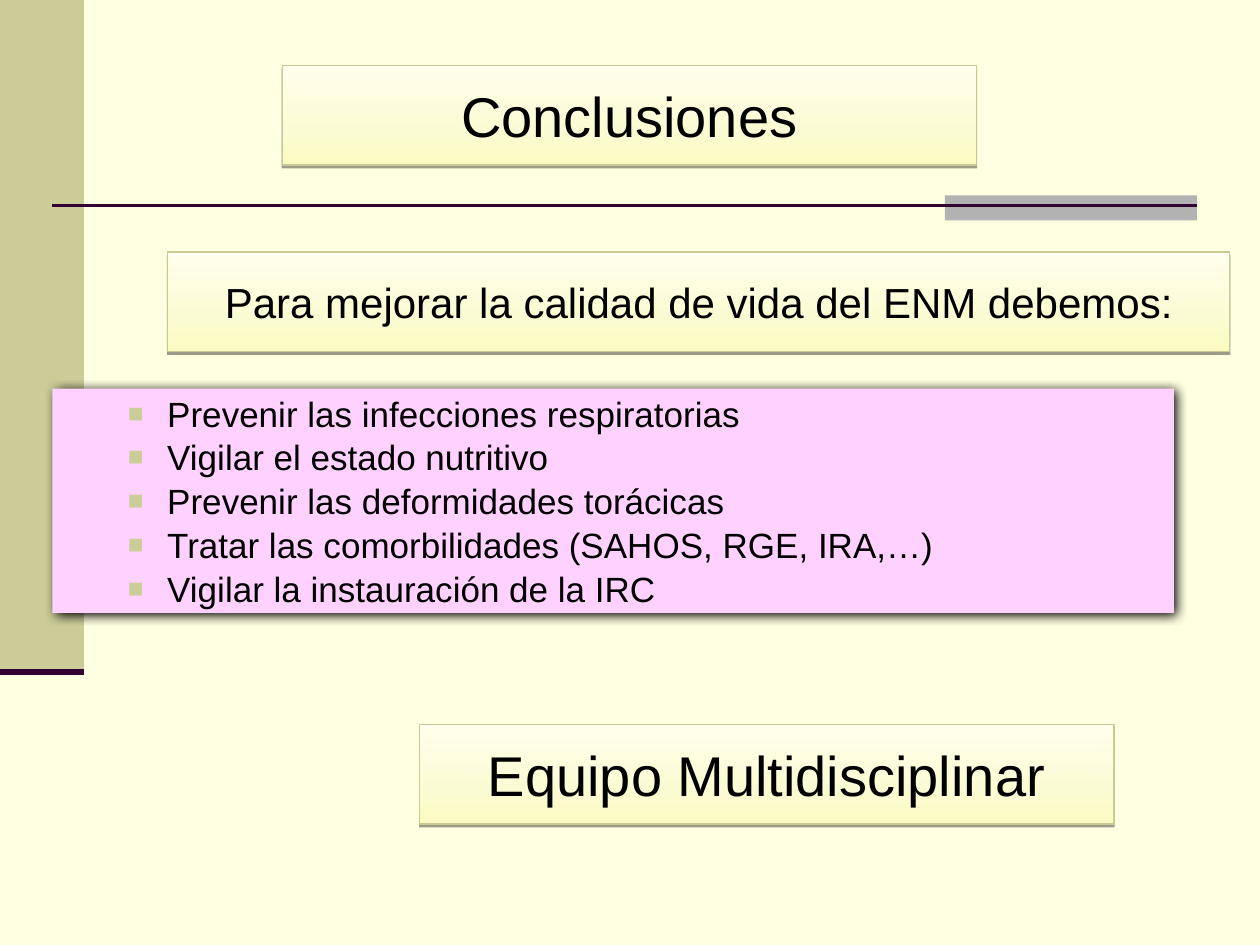
from lxml import etree
from pptx import Presentation
from pptx.dml.color import RGBColor
from pptx.enum.shapes import MSO_CONNECTOR, MSO_SHAPE
from pptx.enum.text import MSO_ANCHOR, PP_ALIGN
from pptx.oxml import parse_xml
from pptx.oxml.ns import nsdecls, qn
from pptx.util import Pt

RECTANGLE, STRAIGHT = MSO_SHAPE.RECTANGLE, MSO_CONNECTOR.STRAIGHT
MIDDLE, CENTER, LEFT = MSO_ANCHOR.MIDDLE, PP_ALIGN.CENTER, PP_ALIGN.LEFT

CREAM = RGBColor(0xFF, 0xFF, 0xE1)
OLIVE = RGBColor(0xCC, 0xCC, 0x99)
GRAY = RGBColor(0xB2, 0xB2, 0xB2)
PLUM = RGBColor(0x33, 0x00, 0x33)
PINK = RGBColor(0xFF, 0xD1, 0xFF)
BORDER = RGBColor(0xC9, 0xC9, 0x94)
BLACK = RGBColor(0, 0, 0)
BANNER_STOPS = [(0, RGBColor(0xFF, 0xFF, 0xED)),
                (65, RGBColor(0xFB, 0xFB, 0xD3)),
                (100, RGBColor(0xFB, 0xFB, 0xC1))]
FONT = "Arial"

# Content: left, top, width and font size go with each banner text
BANNER_HEIGHT = 56.9
BANNERS = [
    ("Conclusiones", 161.3, 37.4, 396.7, 32),
    ("Para mejorar la calidad de vida del ENM debemos:", 95.8, 144, 607, 24),
    ("Equipo Multidisciplinar", 239.8, 414, 396.7, 32),
]
MEASURES = [
    "Prevenir las infecciones respiratorias",
    "Vigilar el estado nutritivo",
    "Prevenir las deformidades torácicas",
    "Tratar las comorbilidades (SAHOS, RGE, IRA,…)",
    "Vigilar la instauración de la IRC",
]


def add_box(left, top, width, height, color=None):
    shape = slide.shapes.add_shape(
        RECTANGLE, Pt(left), Pt(top), Pt(width), Pt(height))
    shape.shadow.inherit = False
    shape.line.fill.background()
    if color is not None:
        shape.fill.solid()
        shape.fill.fore_color.rgb = color
    return shape


def add_rule(left, right, y, weight):
    rule = slide.shapes.add_connector(STRAIGHT, Pt(left), Pt(y), Pt(right), Pt(y))
    rule.line.color.rgb = PLUM
    rule.line.width = Pt(weight)
    etree.SubElement(rule._element.spPr, qn("a:effectLst"))


def add_shadow(shape, alpha, blur, distance, angle):
    effects = shape._element.spPr.find(qn("a:effectLst"))
    effects.append(parse_xml(
        f'<a:outerShdw {nsdecls("a")} blurRad="{Pt(blur)}" dist="{Pt(distance)}" '
        f'dir="{angle * 60000}" algn="ctr" rotWithShape="0"><a:srgbClr val="{BLACK}">'
        f'<a:alpha val="{alpha * 1000}"/></a:srgbClr></a:outerShdw>'))


def set_gradient(shape, stops):
    shape.fill.gradient()
    shape.fill.gradient_angle = 270
    stop_list = shape._element.spPr.find(qn("a:gradFill")).find(qn("a:gsLst"))
    for old_stop in list(stop_list):
        stop_list.remove(old_stop)
    for position, color in stops:
        stop = etree.SubElement(stop_list, qn("a:gs"), pos=str(position * 1000))
        etree.SubElement(stop, qn("a:srgbClr"), val=str(color))


def format_paragraph(paragraph, size, alignment):
    paragraph.alignment = alignment
    for run in paragraph.runs:
        run.font.name = FONT
        run.font.size = Pt(size)
        run.font.color.rgb = BLACK


def add_bullet(paragraph):
    properties = paragraph._p.get_or_add_pPr()
    properties.set("marL", str(Pt(58.5)))
    properties.set("indent", str(Pt(-22.5)))
    color = etree.SubElement(properties, qn("a:buClr"))
    etree.SubElement(color, qn("a:srgbClr"), val=str(OLIVE))
    etree.SubElement(properties, qn("a:buSzPct"), val="75000")
    etree.SubElement(properties, qn("a:buFont"), typeface=FONT)
    etree.SubElement(properties, qn("a:buChar"), char="■")


presentation = Presentation()
presentation.slide_width, presentation.slide_height = Pt(720), Pt(540)
slide = presentation.slides.add_slide(presentation.slide_layouts[6])
slide.background.fill.solid()
slide.background.fill.fore_color.rgb = CREAM

# Side band, accent and rules
add_box(0, 0, 48, 384, OLIVE)
add_box(540, 111.6, 144, 14.4, GRAY)
add_rule(30, 684, 117.5, 1.5)
add_rule(0, 48, 384, 3.5)

# Bulleted panel
panel = add_box(30, 222, 640.8, 128.2, PINK)
add_shadow(panel, 100, 6, 2, 45)
panel.text_frame.word_wrap = True
panel.text_frame.vertical_anchor = MIDDLE
panel.text_frame.text = "\n".join(MEASURES)
for index, paragraph in enumerate(panel.text_frame.paragraphs):
    if index:
        paragraph.space_before = Pt(1)
    add_bullet(paragraph)
    format_paragraph(paragraph, 20, LEFT)

# Banners
for text, left, top, width, size in BANNERS:
    banner = add_box(left, top, width, BANNER_HEIGHT)
    set_gradient(banner, BANNER_STOPS)
    banner.line.color.rgb = BORDER
    banner.line.width = Pt(0.75)
    add_shadow(banner, 38, 0, 1.6, 90)
    banner.text_frame.word_wrap = True
    banner.text_frame.vertical_anchor = MIDDLE
    banner.text_frame.text = text
    format_paragraph(banner.text_frame.paragraphs[0], size, CENTER)

presentation.save("out.pptx")
